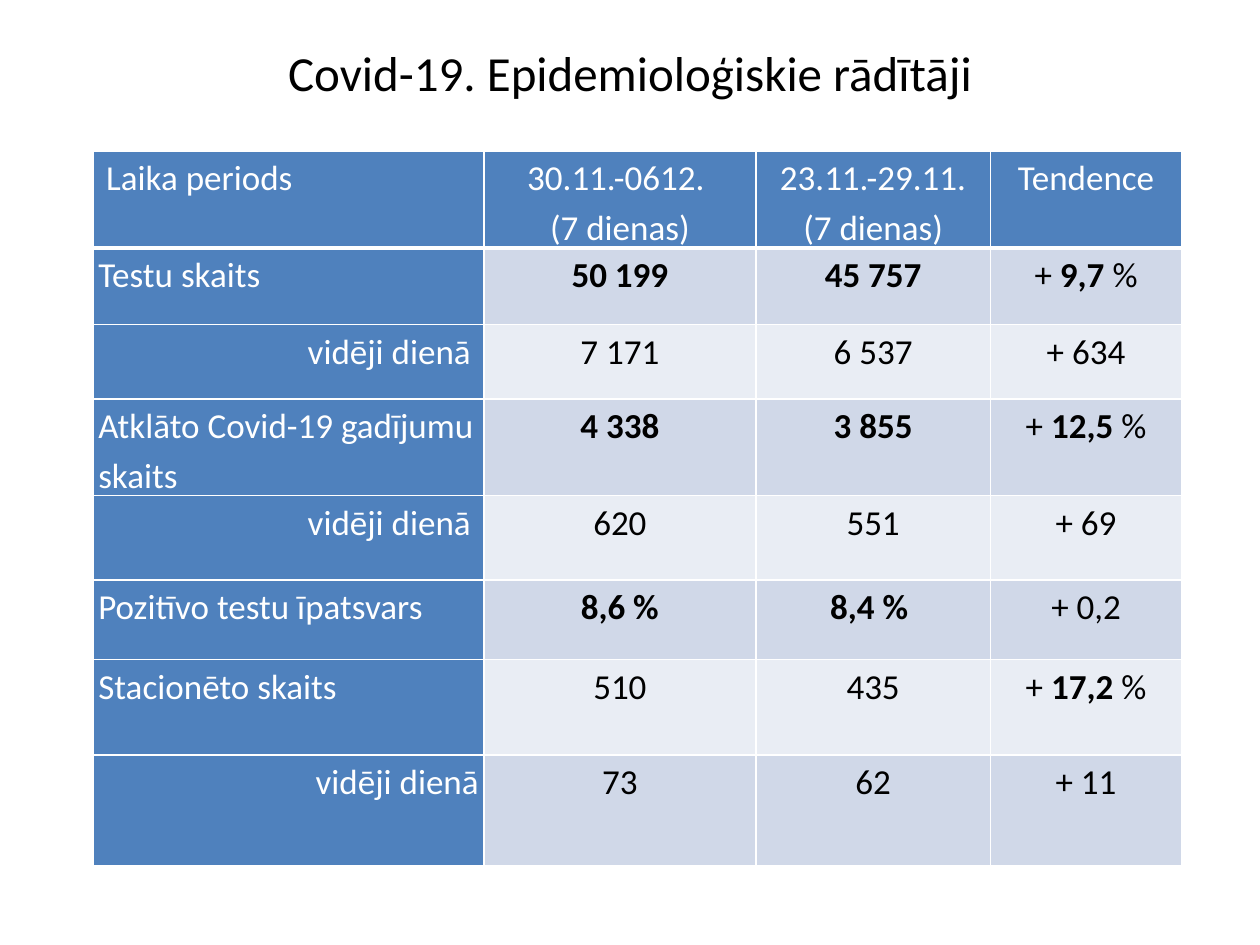
from lxml import etree
from pptx import Presentation
from pptx.dml.color import RGBColor
from pptx.enum.text import MSO_ANCHOR, PP_ALIGN
from pptx.oxml.ns import qn
from pptx.util import Inches, Pt

LEFT, MID, RIGHT = PP_ALIGN.LEFT, PP_ALIGN.CENTER, PP_ALIGN.RIGHT
FONT = "Calibri"
BLUE, WHITE, BLACK = "4F81BD", "FFFFFF", "000000"
BANDS = ["D0D8E8", "E9EDF4"]

# Content: asterisks enclose bold text, line feeds split paragraphs
TITLE = "Covid-19. Epidemioloģiskie rādītāji"
DAILY = "vidēji dienā"
ROWS = [
    (" Laika periods", "30.11.-0612. \n(7 dienas)", "23.11.-29.11.\n(7 dienas)", "Tendence"),
    ("Testu skaits", "*50 199*", "*45 757*", "+ *9,7 *%"),
    (DAILY + " ", "7 171", "6 537", "+ 634"),
    ("Atklāto Covid-19 gadījumu skaits", "*4 338*", "*3 855*", "+* 12,5 *%"),
    (DAILY + " ", "620", "551", "+ 69"),
    ("Pozitīvo testu īpatsvars", "*8,6 %*", "*8,4 % *", "+ 0,2"),
    ("Stacionēto skaits", "510", "435", "+ *17,2 *%"),
    (DAILY, "73", "62", "+ 11"),
]
WIDTHS = [3.1, 2.16, 1.86, 1.52]
HEIGHTS = [0.73, 0.61, 0.59, 0.73, 0.67, 0.63, 0.76, 0.88]


def rgb(code):
    return RGBColor.from_string(code)


def write(par, text, size, color, align):
    par.alignment = align
    for i, part in enumerate(text.split("*")):
        if part:
            run = par.add_run()
            run.text = part
            font = run.font
            font.name, font.size, font.bold = FONT, Pt(size), i % 2 == 1
            font.color.rgb = rgb(color)


def add_edge(cell, side, width):
    line = etree.SubElement(cell._tc.get_or_add_tcPr(), qn("a:ln" + side), w=str(Pt(width)))
    fill = etree.SubElement(line, qn("a:solidFill"))
    etree.SubElement(fill, qn("a:srgbClr"), val=WHITE)


def fill_cell(cell, text, row, col):
    cell.margin_left = cell.margin_right = Inches(0.04)
    cell.margin_top = cell.margin_bottom = 0
    for side in "LRTB":
        add_edge(cell, side, 3 if row == 0 and side == "B" else 1)
    label = row == 0 or col == 0
    cell.fill.solid()
    cell.fill.fore_color.rgb = rgb(BLUE if label else BANDS[(row - 1) % 2])
    align = MID if col else RIGHT if text.startswith(DAILY) else LEFT
    frame = cell.text_frame
    for i, line in enumerate(text.split("\n")):
        par = frame.add_paragraph() if i else frame.paragraphs[0]
        par.line_spacing = 1.15
        write(par, line, 20, WHITE if label else BLACK, align)


def main():
    deck = Presentation()
    deck.slide_width, deck.slide_height = Inches(10), Inches(7.5)
    slide = deck.slides.add_slide(deck.slide_layouts[6])

    # Title
    box = slide.shapes.add_textbox(Inches(0.69), Inches(0.16), Inches(8.62), Inches(0.83))
    frame = box.text_frame
    frame.word_wrap = True
    frame.vertical_anchor = MSO_ANCHOR.MIDDLE
    write(frame.paragraphs[0], TITLE, 28, BLACK, MID)

    # Table of indicators
    table = slide.shapes.add_table(
        len(ROWS), len(WIDTHS), Inches(0.74), Inches(1.2),
        Inches(sum(WIDTHS)), Inches(sum(HEIGHTS))).table
    for col, width in zip(table.columns, WIDTHS):
        col.width = Inches(width)
    for row, height in zip(table.rows, HEIGHTS):
        row.height = Inches(height)
    for r, texts in enumerate(ROWS):
        for c, text in enumerate(texts):
            fill_cell(table.cell(r, c), text, r, c)

    deck.save("out.pptx")


if __name__ == "__main__":
    main()
